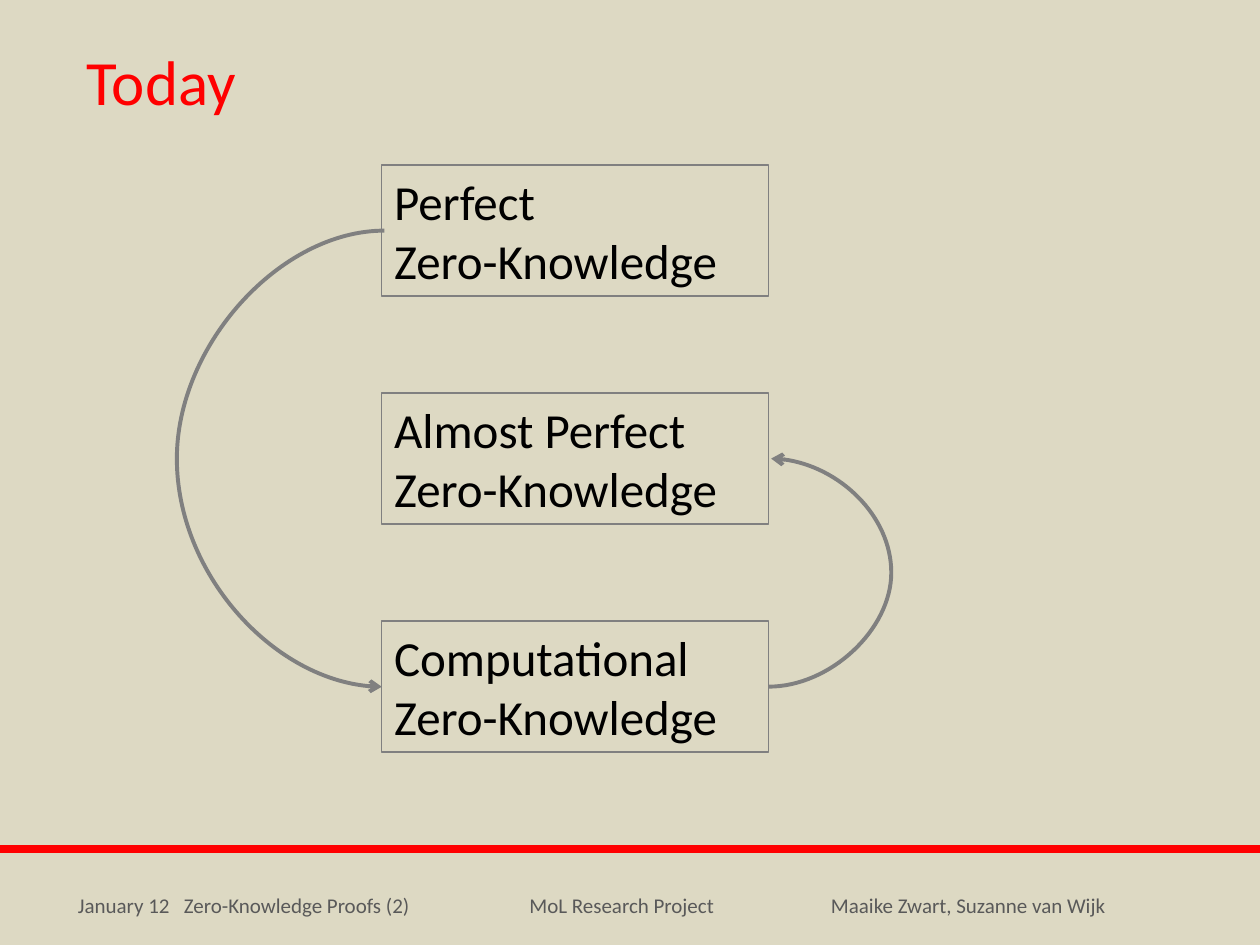
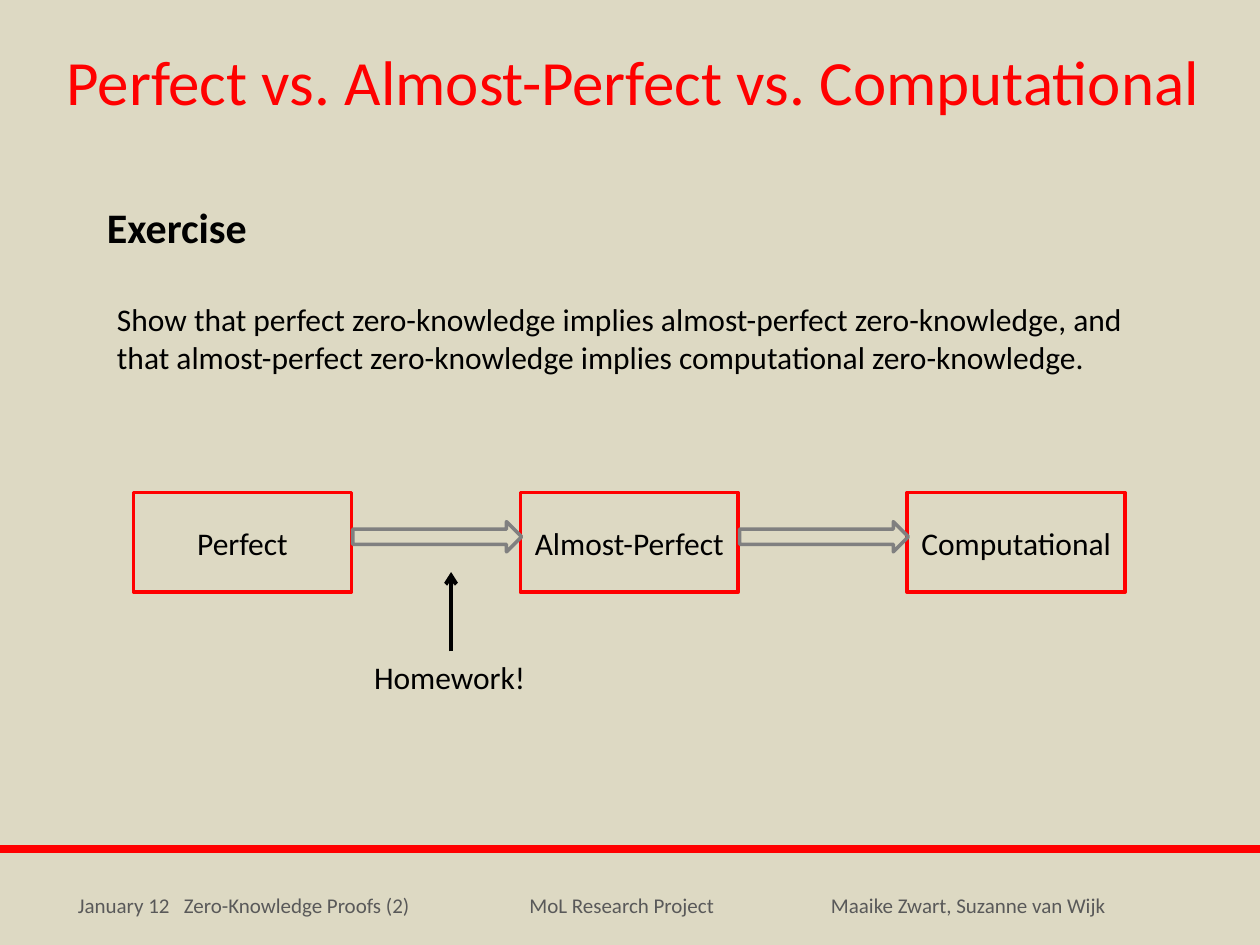
import pptx
import pptx.dml.color
import pptx.enum.shapes
import pptx.enum.text
import pptx.oxml
import pptx.oxml.ns
import pptx.util

RGBColor = pptx.dml.color.RGBColor
Preset = pptx.enum.shapes.MSO_SHAPE
Connector = pptx.enum.shapes.MSO_CONNECTOR
Align = pptx.enum.text.PP_ALIGN
Anchor = pptx.enum.text.MSO_ANCHOR
AutoSize = pptx.enum.text.MSO_AUTO_SIZE
qn = pptx.oxml.ns.qn

SAND = RGBColor(0xDD, 0xD9, 0xC3)
RED = RGBColor(0xFF, 0x00, 0x00)
GREY = RGBColor(0x80, 0x80, 0x80)
DARK_GREY = RGBColor(0x59, 0x59, 0x59)
BLACK = RGBColor(0x00, 0x00, 0x00)

PX = 9144  # 100 px to the inch
PAGE_WIDTH, PAGE_HEIGHT = 1000, 750
BAND_Y = 674

# Text styles: size in points, colour, weight
TITLE = {"size": 36, "color": RED, "bold": False}
HEADING = {"size": 24, "color": BLACK, "bold": True}
BODY = {"size": 18, "color": BLACK, "bold": False}
KIND = {"size": 28, "color": BLACK, "bold": False}
FOOTER = {"size": 12, "color": DARK_GREY, "bold": False}

# Frame formats
LABEL = {"word_wrap": False, "auto_size": AutoSize.SHAPE_TO_FIT_TEXT,
         "vertical_anchor": Anchor.TOP}
BLOCK = {**LABEL, "word_wrap": True}
CENTRED = {"word_wrap": True, "auto_size": AutoSize.NONE,
           "vertical_anchor": Anchor.MIDDLE}


def px(*lengths):
    return [pptx.util.Emu(length * PX) for length in lengths]


def set_all(target, values):
    for name, value in values.items():
        setattr(target, name, value)


def add_span(para, text, style):
    span = para.add_run()
    span.text = text
    set_all(span.font, {"name": "Calibri", "bold": style["bold"],
                        "size": pptx.util.Pt(style["size"])})
    span.font.color.rgb = style["color"]
    return span


def write(box, lines, style, frame_format):
    frame = box.text_frame
    set_all(frame, frame_format)
    align = Align.CENTER if frame_format is CENTRED else Align.LEFT
    for number, line in enumerate(lines):
        para = frame.add_paragraph() if number else frame.paragraphs[0]
        para.alignment = align
        add_span(para, line, style)


def add_text(page, text, place, style, frame_format):
    box = page.shapes.add_textbox(*px(*place))
    write(box, [text], style, frame_format)
    return box


def add_outline(page, preset, place, color, width):
    shape = page.shapes.add_shape(preset, *px(*place))
    shape.shadow.inherit = False
    shape.fill.background()
    shape.line.color.rgb = color
    shape.line.width = pptx.util.Pt(width)
    return shape


def add_line(page, start, end, color, width, arrow=False,
             kind=Connector.STRAIGHT):
    line = page.shapes.add_connector(kind, *px(*start, *end))
    line.line.color.rgb = color
    line.line.width = pptx.util.Pt(width)
    if arrow:
        pptx.oxml.ns  # namespace map used by qn
        head = line.line._get_or_add_ln().makeelement(
            qn("a:tailEnd"), {"type": "arrow"})
        line.line._get_or_add_ln().append(head)
    properties = line._element.spPr
    properties.append(properties.makeelement(qn("a:effectLst"), {}))
    return line


def add_curve(page, start, end, bend_x):
    """Curved arrow that swings out sideways as far as bend_x."""
    curve = add_line(page, start, end, GREY, 2.25, True, Connector.CURVE)
    properties = curve._element.spPr
    reach = round(100000 * (bend_x - start[0]) / (end[0] - start[0]))
    geometry = properties.find(qn("a:prstGeom"))
    guides = geometry.find(qn("a:avLst"))
    guides.append(guides.makeelement(
        qn("a:gd"), {"name": "adj1", "fmla": f"val {reach}"}))
    # A leftward start is a half turn with a vertical flip
    transform = properties.find(qn("a:xfrm"))
    if end[0] < start[0]:
        del transform.attrib["flipH"]
        transform.set("rot", "10800000")
        transform.set("flipV", "1")


def add_footer(page):
    place = {left: (left, 698, 317, 40) for left in (35, 335, 610)}
    date = add_text(page, "January 12", place[35], FOOTER, CENTRED)
    para = date.text_frame.paragraphs[0]
    gap = add_span(para, " ", FOOTER)
    gap.font._element.set("spc", "540")  # widened space after the date
    add_span(para, "Zero-Knowledge Proofs (2)", FOOTER)
    add_text(page, "Maaike Zwart, Suzanne van Wijk", place[610], FOOTER, CENTRED)
    add_text(page, "MoL Research Project", place[335], FOOTER, CENTRED)


def add_page(deck, title, left, width):
    page = deck.slides.add_slide(deck.slide_layouts[6])
    page.background.fill.solid()
    page.background.fill.fore_color.rgb = SAND
    add_footer(page)
    add_line(page, (0, BAND_Y), (PAGE_WIDTH, BAND_Y), RED, 4.5)
    add_text(page, title, (left, 29, width, 71), TITLE, LABEL)
    return page


def build_today(deck):
    page = add_page(deck, "Today", 59, 139)

    # Three kinds of zero-knowledge, stacked
    left, top, width, height, step = 303, 131, 307, 104, 181
    kinds = [["Perfect", "Zero-Knowledge"],
             ["Almost Perfect", "Zero-Knowledge"],
             ["Computational Zero-Knowledge"]]
    for row, lines in enumerate(kinds):
        box = add_outline(page, Preset.RECTANGLE,
                          (left, top + row * step, width, height), GREY, 0.75)
        write(box, lines, KIND, BLOCK)

    # Arrows between the middles of the boxes
    perfect, almost, computational = (
        top + height // 2 + row * step for row in range(3))
    right = left + width
    add_curve(page, (left + 2, perfect), (left, computational), 141)
    add_curve(page, (right, computational), (right + 2, almost), 707)


def build_exercise(deck):
    page = add_page(deck, "Perfect vs. Almost-Perfect vs. Computational", 43, 930)

    # Task
    add_text(page, "Exercise", (75, 155, 133, 50), HEADING, LABEL)
    add_text(page, "Show that perfect zero-knowledge implies almost-perfect "
             "zero-knowledge, and that almost-perfect zero-knowledge implies "
             "computational zero-knowledge.", (83, 233, 835, 71), BODY, BLOCK)

    # Chain of implications
    left, step, width = 106, 307, 173
    names = ["Perfect", "Almost-Perfect", "Computational"]
    for column, name in enumerate(names):
        box = add_outline(page, Preset.RECTANGLE,
                          (left + column * step, 391, width, 79), RED, 2)
        write(box, [name], BODY, CENTRED)
    for column in range(len(names) - 1):
        arrow_left = left + width + 1 + column * step
        add_outline(page, Preset.RIGHT_ARROW,
                    (arrow_left, 414, step - width, 24), GREY, 2)

    # Homework mark
    add_text(page, "Homework!", (287, 517, 142, 40), BODY, LABEL)
    add_line(page, (358, 517), (358, 454), BLACK, 2.25, arrow=True)


def main():
    deck = pptx.Presentation()
    deck.slide_width, deck.slide_height = px(PAGE_WIDTH, PAGE_HEIGHT)
    build_today(deck)
    build_exercise(deck)
    deck.save("out.pptx")


if __name__ == "__main__":
    main()
